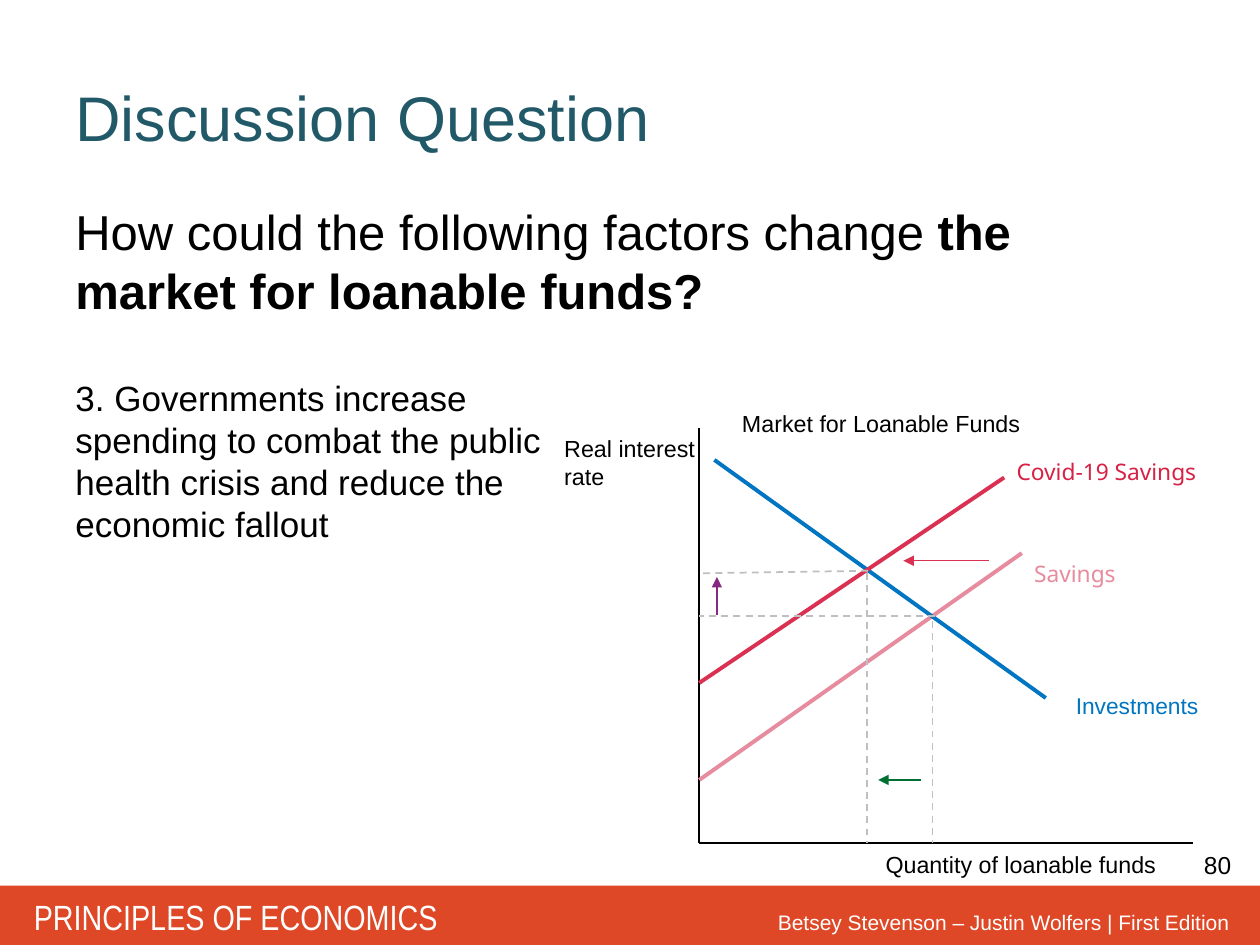
from collections import namedtuple
from dataclasses import dataclass

from lxml import etree
from pptx import Presentation
from pptx import util as u
from pptx.dml.color import RGBColor
from pptx.enum import dml, shapes, text
from pptx.oxml import ns

Box = namedtuple("Box", "left top width height")


@dataclass(frozen=True)
class Theme:
    """Colours, fonts and type sizes of the slide."""
    font: str = "Arial"
    narrow: str = "Arial Narrow"
    curve_font: str = "Noto Sans"
    black: str = "000000"
    white: str = "FFFFFF"
    band: str = "DE4826"
    heading: str = "215968"
    savings: str = "E78B9E"
    covid: str = "DA3052"
    covid_label: str = "D72246"
    investments: str = "0075C1"
    guide: str = "BFBFBF"
    rate_shift: str = "842A82"
    quantity_shift: str = "007032"
    title_size: float = 36
    question_size: float = 28
    factor_size: float = 20
    number_size: float = 14
    axis_size: float = 13.3
    curve_size: float = 13
    credit_size: float = 12


THEME = Theme()


def inside(box, left, top, width, height):
    """Return a box whose corner is an offset from the corner of another."""
    return Box(box.left + left, box.top + top, width, height)


def add_label(slide, box, parts, size, color=THEME.black, font=THEME.font,
              align=text.PP_ALIGN.LEFT, anchor=text.MSO_ANCHOR.TOP):
    """Add a wrapped paragraph made of (wording, bold) parts."""
    label = slide.shapes.add_textbox(*map(u.Inches, box))
    frame = label.text_frame
    frame.word_wrap = True
    frame.vertical_anchor = anchor
    paragraph = frame.paragraphs[0]
    paragraph.alignment = align
    for wording, bold in parts:
        run = paragraph.add_run()
        run.text = wording
        run.font.size = u.Pt(size)
        run.font.name = font
        run.font.bold = bold
        run.font.color.rgb = RGBColor.from_string(color)


def add_line(slide, box, start, end, color, width, dashed=False, arrow=False):
    """Draw a line between two offsets in a box, with any arrowhead at its start."""
    points = [u.Inches(value) for x, y in (start, end)
              for value in (box.left + x, box.top + y)]
    line = slide.shapes.add_connector(shapes.MSO_CONNECTOR.STRAIGHT, *points)
    line.line.color.rgb = RGBColor.from_string(color)
    line.line.width = u.Pt(width)
    if dashed:
        line.line.dash_style = dml.MSO_LINE.DASH
    if arrow:
        etree.SubElement(line.line._get_or_add_ln(), ns.qn("a:headEnd"), type="triangle")
    etree.SubElement(line._element.spPr, ns.qn("a:effectLst"))


def add_footer(slide, box):
    """Add the coloured band with the book title, the credit and the page number."""
    band = slide.shapes.add_shape(shapes.MSO_SHAPE.RECTANGLE, *map(u.Inches, box))
    band.shadow.inherit = False
    band.fill.solid()
    band.fill.fore_color.rgb = RGBColor.from_string(THEME.band)
    band.line.fill.background()
    right = text.PP_ALIGN.RIGHT
    add_label(slide, inside(box, 0.17, 0.03, 3.69, 0.44),
              [("PRINCIPLES OF ECONOMICS", False)],
              THEME.factor_size, THEME.white, THEME.narrow)
    add_label(slide, inside(box, 5.73, 0.14, 4.13, 0.3),
              [("Betsey Stevenson – Justin Wolfers | First Edition", False)],
              THEME.credit_size, THEME.white, align=right)
    add_label(slide, inside(box, 8.96, -0.33, 0.91, 0.34), [("80", False)],
              THEME.number_size, align=right)


def add_question(slide, box):
    """Add the heading, the question and the factor under discussion."""
    add_label(slide, inside(box, 0, 0, box.width, 1.25),
              [("Discussion Question", False)], THEME.title_size, THEME.heading,
              anchor=text.MSO_ANCHOR.MIDDLE)
    add_label(slide, inside(box, 0, 1.25, box.width, 1.1),
              [("How could the following factors change ", False),
               ("the market for loanable funds?", True)], THEME.question_size)
    add_label(slide, inside(box, 0, 2.64, 3.95, 4.03),
              [("3. Governments increase spending to combat the public health "
                "crisis and reduce the economic fallout", False)], THEME.factor_size)


def add_market(slide, box):
    """Draw the market for loanable funds with its axes along the box."""
    origin = (0, box.height)
    for end in ((0, 0), (box.width, box.height)):
        add_line(slide, box, origin, end, THEME.black, 1)

    for wording, left, top, width, height in (
            ("Real interest rate", -1.17, 0, 1.36, 0.55),
            ("Quantity of loanable funds", 1.38, 3.3, 2.54, 0.32),
            ("Market for Loanable Funds", 0.24, -0.2, 3.45, 0.32)):
        add_label(slide, inside(box, left, top, width, height),
                  [(wording, False)], THEME.axis_size)

    for wording, start, end, place, color, label_color, font in (
            ("Savings", (0, 2.79), (2.56, 0.99), (2.56, 0.99),
             THEME.savings, THEME.savings, THEME.curve_font),
            ("Investments", (0.12, 0.25), (2.75, 2.14), (2.89, 2.04),
             THEME.investments, THEME.investments, THEME.font),
            ("Covid-19 Savings", (0, 2.02), (2.42, 0.39), (2.42, 0.18),
             THEME.covid, THEME.covid_label, THEME.curve_font)):
        add_line(slide, box, start, end, color, 2.25)
        add_label(slide, inside(box, *place, 1.73, 0.32), [(wording, False)],
                  THEME.curve_size, label_color, font)

    for tip, tail, color in (
            ((1.62, 1.05), (2.3, 1.05), THEME.covid),
            ((0.14, 1.18), (0.14, 1.48), THEME.rate_shift),
            ((1.42, 2.79), (1.76, 2.79), THEME.quantity_shift)):
        add_line(slide, box, tip, tail, color, 0.75, arrow=True)

    for start, end in (
            ((1.85, 1.53), (1.85, box.height)),
            ((1.33, 1.15), (1.33, box.height)),
            ((1.87, 1.49), (0, 1.49)),
            ((1.34, 1.13), (0, 1.15))):
        add_line(slide, box, start, end, THEME.guide, 1, dashed=True)


def main():
    """Build the discussion slide and save it."""
    deck = Presentation()
    deck.slide_width, deck.slide_height = u.Inches(10), u.Inches(7.5)
    slide = deck.slides.add_slide(deck.slide_layouts[6])
    add_footer(slide, Box(0, 7.03, 10, 0.47))
    add_question(slide, Box(0.5, 0.3, 9, 6.67))
    add_market(slide, Box(5.55, 3.4, 3.92, 3.29))
    deck.save("out.pptx")


if __name__ == "__main__":
    main()
